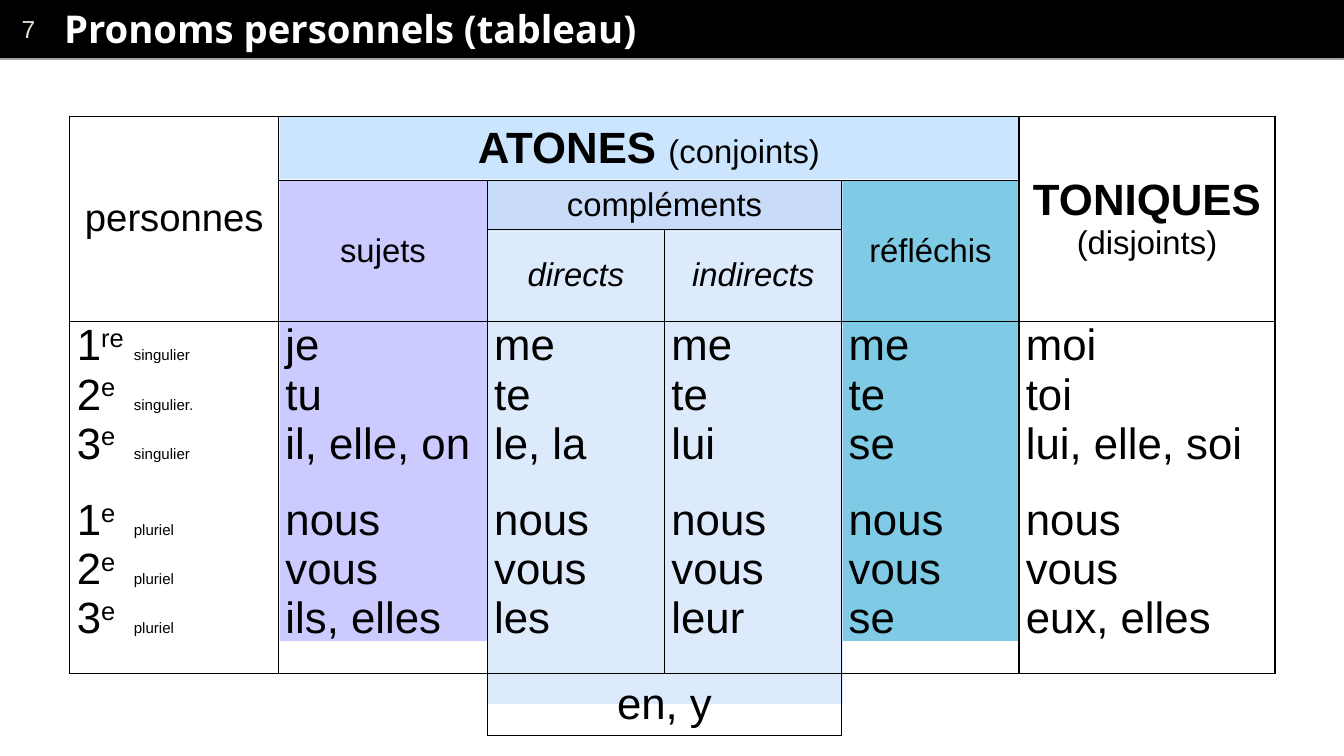
from lxml import etree
from pptx import Presentation
from pptx.dml.color import RGBColor
from pptx.enum.shapes import MSO_CONNECTOR, MSO_SHAPE
from pptx.enum.text import MSO_ANCHOR, PP_ALIGN
from pptx.oxml.ns import qn
from pptx.util import Pt

RECT, STRAIGHT = MSO_SHAPE.RECTANGLE, MSO_CONNECTOR.STRAIGHT
MIDDLE, TOP = MSO_ANCHOR.MIDDLE, MSO_ANCHOR.TOP
LEFT, CENTER = PP_ALIGN.LEFT, PP_ALIGN.CENTER
PX = 9144  # 100 px to the inch

THEME = {
    "body_font": "Arial", "title_font": "Open Sans",
    "black": "000000", "white": "FFFFFF", "number": "E7DED1", "rule": "A6A6A6",
    "complements": "BDD6F9", "complements_head": "93BBF5", "reflechis": "0099CC",
    "atones": "99CCFF", "sujets": "9999FF",
    "title": 28, "personnes": 28, "large": 32, "medium": 24, "page": 18, "small": 11,
}


def write(frame, lines, align=LEFT, color="black", font="body_font"):
    """Each line is a list of (text, size, style) pieces."""
    for index, pieces in enumerate(lines):
        paragraph = frame.paragraphs[0] if index == 0 else frame.add_paragraph()
        paragraph.alignment = align
        for text, size, style in pieces:
            run = paragraph.add_run()
            run.text = text
            run.font.size = Pt(THEME[size])
            run.font.name = THEME[font]
            run.font.color.rgb = RGBColor.from_string(THEME[color])
            run.font.bold = style == "bold"
            run.font.italic = style == "italic"
            if style == "super":
                run._r.get_or_add_rPr().set("baseline", "30000")


def set_borders(cell, sides):
    properties = cell._tc.get_or_add_tcPr()
    for index, side in enumerate("LRTB"):
        line = etree.Element(qn(f"a:ln{side}"), w=str(Pt(1)))
        if side in sides:
            fill = etree.SubElement(line, qn("a:solidFill"))
            etree.SubElement(fill, qn("a:srgbClr"), val=THEME["black"])
        else:
            etree.SubElement(line, qn("a:noFill"))
        properties.insert(index, line)


deck = Presentation()
deck.slide_width, deck.slide_height = 1365 * PX, 768 * PX
slide = deck.slides.add_slide(deck.slide_layouts[6])
shapes = slide.shapes

# Header band with page number
band = shapes.add_shape(RECT, 0, 0, 1365 * PX, 58 * PX)
band.shadow.inherit = False
band.fill.solid()
band.fill.fore_color.rgb = RGBColor.from_string(THEME["black"])
band.line.color.rgb = RGBColor.from_string(THEME["black"])
band.line.width = Pt(0.75)
band.text_frame.margin_left = 22 * PX
band.text_frame.vertical_anchor = MIDDLE
write(band.text_frame, [[("7", "page", "")]], color="number")

rule = shapes.add_connector(STRAIGHT, 0, 60 * PX, 1365 * PX, 60 * PX)
rule.line.color.rgb = RGBColor.from_string(THEME["rule"])
rule.line.width = Pt(2)
etree.SubElement(rule._element.spPr, qn("a:effectLst"))

# Title
title = shapes.add_textbox(61 * PX, 1 * PX, 1285 * PX, 56 * PX).text_frame
title.word_wrap = True
title.vertical_anchor = MIDDLE
title.margin_left = title.margin_right = title.margin_top = title.margin_bottom = 4 * PX
write(title, [[("Pronoms personnels (tableau)", "title", "bold")]],
      color="white", font="title_font")

# Half-transparent colour zones behind the table
ZONES = [
    ("complements", 495, 234, 361, 481),
    ("reflechis", 856, 184, 179, 467),
    ("complements_head", 495, 184, 361, 50),
    ("atones", 284, 118, 751, 64),
    ("sujets", 284, 184, 211, 467),
]
for color, *box in ZONES:
    zone = shapes.add_shape(RECT, *(length * PX for length in box))
    zone.shadow.inherit = False
    zone.fill.solid()
    zone.fill.fore_color.rgb = RGBColor.from_string(THEME[color])
    tint = zone._element.spPr.find(".//" + qn("a:srgbClr"))
    etree.SubElement(tint, qn("a:alpha"), val="50000")
    zone.line.fill.background()

# Table grid
COLUMNS = [212, 212, 180, 180, 180, 260]
ROWS = [65, 50, 87, 358, 63]
pronouns = shapes.add_table(len(ROWS), len(COLUMNS), 71 * PX, 118 * PX,
                            sum(COLUMNS) * PX, sum(ROWS) * PX).table
pronouns.first_row = pronouns.horz_banding = False
for column, width in zip(pronouns.columns, COLUMNS):
    column.width = width * PX
for row, height in zip(pronouns.rows, ROWS):
    row.height = height * PX

# Cell contents: pronouns by person, singular then plural
PERSONS = [
    [(number, "large", ""), (ending, "large", "super"), ("\t" + label, "small", "")]
    for number, ending, label in [
        ("1", "re", "singulier"), ("2", "e", "singulier."), ("3", "e", "singulier"),
        ("1", "e", "pluriel"), ("2", "e", "pluriel"), ("3", "e", "pluriel")]
]
FORMS = [
    ["je", "tu", "il, elle, on", "nous", "vous", "ils, elles"],
    ["me", "te", "le, la", "nous", "vous", "les"],
    ["me", "te", "lui", "nous", "vous", "leur"],
    ["me", "te", "se", "nous", "vous", "se"],
    ["moi", "toi", "lui, elle, soi", "nous", "vous", "eux, elles"],
]

# Blocks: row, column, rows spanned, columns spanned, visible sides, lines
BLOCKS = [
    (0, 0, 3, 1, "LRTB", [[("personnes", "personnes", "")]]),
    (0, 1, 1, 4, "LRTB", [[("ATONES ", "large", "bold"), ("(conjoints)", "medium", "")]]),
    (0, 5, 3, 1, "LRTB", [[("TONIQUES", "large", "bold")], [("(disjoints)", "medium", "")]]),
    (1, 1, 2, 1, "LRTB", [[("sujets", "medium", "")]]),
    (1, 2, 1, 2, "LRTB", [[("compléments", "medium", "")]]),
    (1, 4, 2, 1, "LRTB", [[("réfléchis", "medium", "")]]),
    (2, 2, 1, 1, "LRTB", [[("directs", "medium", "italic")]]),
    (2, 3, 1, 1, "LRTB", [[("indirects", "medium", "italic")]]),
    (3, 0, 1, 1, "LRTB", PERSONS),
    (4, 0, 1, 2, "RT", []),
    (4, 2, 1, 2, "LRTB", [[("en, y", "large", "")]]),
    (4, 4, 1, 2, "LT", []),
]
for column, forms in enumerate(FORMS, start=1):
    BLOCKS.append((3, column, 1, 1, "LRTB", [[(form, "large", "")] for form in forms]))

for top, left, height, width, sides, lines in BLOCKS:
    bottom, right = top + height - 1, left + width - 1
    origin = pronouns.cell(top, left)
    if height * width > 1:
        origin.merge(pronouns.cell(bottom, right))
    for r in range(top, bottom + 1):
        for c in range(left, right + 1):
            cell = pronouns.cell(r, c)
            cell.fill.background()
            edges = {"L": c == left, "R": c == right, "T": r == top, "B": r == bottom}
            is_origin = (r, c) == (top, left)
            set_borders(cell, [side for side in sides if is_origin or edges[side]])
    is_list = top == 3
    origin.margin_left = origin.margin_right = 7 * PX
    origin.margin_top = origin.margin_bottom = 0
    origin.vertical_anchor = TOP if is_list else MIDDLE
    write(origin.text_frame, lines, LEFT if is_list else CENTER)
    if is_list:
        origin.text_frame.paragraphs[3].space_before = Pt(20)

# Tab stop that lines up the number labels
for paragraph in pronouns.cell(3, 0).text_frame.paragraphs:
    stops = etree.SubElement(paragraph._p.get_or_add_pPr(), qn("a:tabLst"))
    etree.SubElement(stops, qn("a:tab"), pos=str(58 * PX), algn="l")

deck.save("out.pptx")
